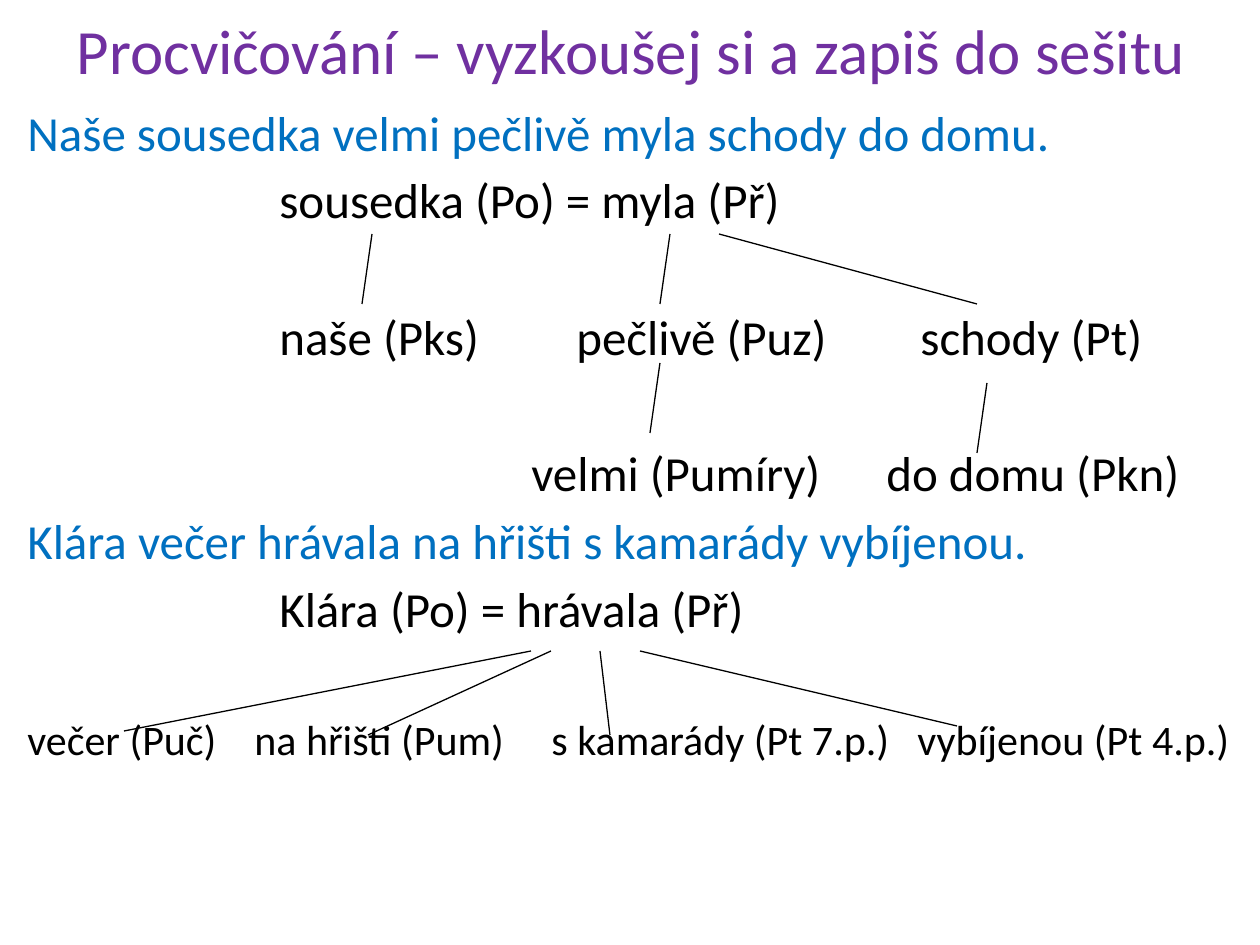
"""Build the Czech sentence-analysis practice slide."""
from dataclasses import dataclass

import lxml.etree
import pptx
import pptx.dml.color
import pptx.enum.shapes
import pptx.enum.text
import pptx.oxml.ns
import pptx.util

EMU_PER_PX = 914400 / 126
FONT = "Calibri"
COLORS = {"title": "7030A0", "sentence": "0070C0", "analysis": "000000", "branch": "000000"}
LINE_GAP = 5.1
BRANCH_GAP = 44.3


@dataclass
class Line:
    text: str
    color: str = "analysis"
    size: int = 28
    gap: float = LINE_GAP
    tabs: tuple[int, ...] = ()


@dataclass
class Branch:
    start: tuple[int, int]
    end: tuple[int, int]


TITLE = Line("Procvičování – vyzkoušej si a zapiš do sešitu", "title", 36, 0)
LINES = [
    Line("Naše sousedka velmi pečlivě myla schody do domu.", "sentence", gap=0),
    Line("\tsousedka (Po) = myla (Př)", tabs=(252,)),
    Line("\tnaše (Pks)\tpečlivě (Puz)\tschody (Pt)", gap=BRANCH_GAP, tabs=(252, 549, 893)),
    Line("\tvelmi (Pumíry)\tdo domu (Pkn)", gap=BRANCH_GAP, tabs=(504, 859)),
    Line("Klára večer hrávala na hřišti s kamarády vybíjenou.", "sentence"),
    Line("\tKlára (Po) = hrávala (Př)", tabs=(252,)),
    Line("večer (Puč)\tna hřišti (Pum)\ts kamarády (Pt 7.p.)\tvybíjenou (Pt 4.p.)",
         size=24, gap=43.7, tabs=(227, 524, 890)),
]
BRANCHES = [
    Branch((372, 234), (362, 304)),
    Branch((670, 234), (660, 304)),
    Branch((719, 234), (977, 304)),
    Branch((987, 383), (977, 453)),
    Branch((531, 651), (124, 731)),
    Branch((551, 651), (368, 735)),
    Branch((600, 651), (610, 735)),
    Branch((640, 651), (957, 726)),
    Branch((660, 363), (650, 433)),
]


def px(length: int) -> pptx.util.Emu:
    return pptx.util.Emu(round(length * EMU_PER_PX))


def rgb(name: str) -> pptx.dml.color.RGBColor:
    return pptx.dml.color.RGBColor.from_string(COLORS[name])


def add_text_box(slide, left: int, top: int, width: int, height: int):
    shape = slide.shapes.add_textbox(px(left), px(top), px(width), px(height))
    shape.text_frame.word_wrap = True
    return shape.text_frame


def write_line(paragraph, line: Line) -> None:
    paragraph.text = line.text
    if line.gap:
        paragraph.space_before = pptx.util.Pt(line.gap)
    if line.tabs:
        properties = paragraph._p.get_or_add_pPr()
        tab_list = lxml.etree.SubElement(properties, pptx.oxml.ns.qn("a:tabLst"))
        for position in line.tabs:
            lxml.etree.SubElement(tab_list, pptx.oxml.ns.qn("a:tab"), pos=str(px(position)), algn="l")
    paragraph.font.name = FONT
    paragraph.font.size = pptx.util.Pt(line.size)
    paragraph.font.color.rgb = rgb(line.color)


def draw_title(slide) -> None:
    frame = add_text_box(slide, 64, 1, 1134, 97)
    frame.margin_left = frame.margin_right = 0
    frame.vertical_anchor = pptx.enum.text.MSO_ANCHOR.MIDDLE
    paragraph = frame.paragraphs[0]
    paragraph.alignment = pptx.enum.text.PP_ALIGN.CENTER
    write_line(paragraph, TITLE)


def draw_body(slide) -> None:
    frame = add_text_box(slide, 15, 96, 1230, 833)
    for index, line in enumerate(LINES):
        write_line(frame.add_paragraph() if index else frame.paragraphs[0], line)


def draw_branch(slide, branch: Branch) -> None:
    connector = slide.shapes.add_connector(
        pptx.enum.shapes.MSO_CONNECTOR.STRAIGHT, *map(px, branch.start + branch.end))
    connector.line.color.rgb = rgb("branch")
    connector.line.width = pptx.util.Pt(0.75)
    lxml.etree.SubElement(connector._element.spPr, pptx.oxml.ns.qn("a:effectLst"))


def main() -> None:
    presentation = pptx.Presentation()
    presentation.slide_width, presentation.slide_height = px(1260), px(945)
    slide = presentation.slides.add_slide(presentation.slide_layouts[6])
    draw_title(slide)
    draw_body(slide)
    for branch in BRANCHES:
        draw_branch(slide, branch)
    presentation.save("out.pptx")


if __name__ == "__main__":
    main()
